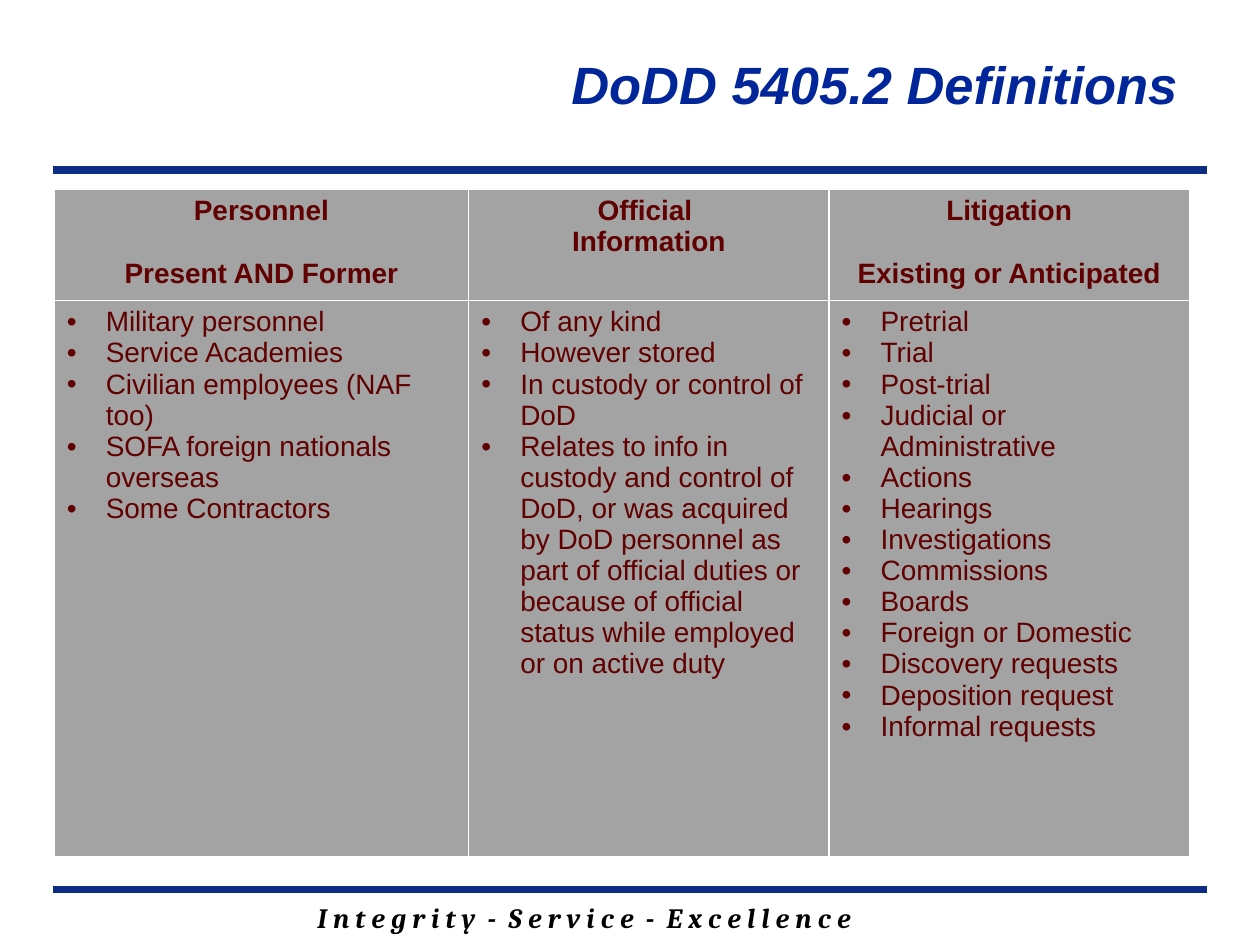
"""Build the DoDD 5405.2 definitions slide: a title, two rules, a table and a motto."""
from lxml.etree import SubElement
from pptx import Presentation
from pptx.dml.color import RGBColor
from pptx.enum.shapes import MSO_CONNECTOR as Link
from pptx.enum.text import MSO_ANCHOR as Anchor, MSO_AUTO_SIZE as Fit, PP_ALIGN as Align
from pptx.oxml.ns import qn
from pptx.util import Inches, Pt

NAVY = RGBColor(0x0C, 0x2D, 0x83)
BLUE = RGBColor(0x00, 0x26, 0x99)
MAROON = RGBColor(0x60, 0x00, 0x00)
GRAY = RGBColor(0xA3, 0xA3, 0xA3)
BLACK = RGBColor(0x00, 0x00, 0x00)

COLUMNS = [
    (3.29, 18, ["Personnel", "Present AND Former"],
     ["Military personnel", "Service Academies", "Civilian employees (NAF too)",
      "SOFA foreign nationals overseas", "Some Contractors"]),
    (2.86, 0, ["Official ", "Information"],
     ["Of any kind", "However stored", "In custody or control of DoD",
      "Relates to info in custody and control of DoD, or was acquired by DoD "
      "personnel as part of official duties or because of official status "
      "while employed or on active duty"]),
    (2.86, 18, ["Litigation", "Existing or Anticipated"],
     ["Pretrial", "Trial", "Post-trial", "Judicial or Administrative", "Actions",
      "Hearings", "Investigations", "Commissions", "Boards", "Foreign or Domestic",
      "Discovery requests", "Deposition request", "Informal requests"]),
]
ROWS = [0.83, 4.42]


def write(para, text, size, color, bold=False, slant=False, face="Arial"):
    run = para.add_run()
    run.text = text
    font = run.font
    font.name, font.size, font.bold, font.italic = face, Pt(size), bold, slant
    font.color.rgb = color


def paint(cell):
    props = cell._tc.get_or_add_tcPr()
    for side in ("lnL", "lnR", "lnT", "lnB"):
        edge = SubElement(props, qn(f"a:{side}"), w=str(Pt(1)))
        SubElement(SubElement(edge, qn("a:solidFill")), qn("a:srgbClr"), val="FFFFFF")
    cell.fill.solid()
    cell.fill.fore_color.rgb = GRAY


deck = Presentation()
deck.slide_width, deck.slide_height = Inches(10), Inches(7.5)
slide = deck.slides.add_slide(deck.slide_layouts[5])
shapes = slide.shapes

for y in (1.35, 7.06):
    rule = shapes.add_connector(Link.STRAIGHT, Inches(0.42), Inches(y), Inches(9.58), Inches(y))
    rule.line.color.rgb = NAVY
    rule.line.width = Pt(4.5)
    SubElement(rule._element.spPr, qn("a:effectLst"))

motto = shapes.add_textbox(Inches(2.42), Inches(7.1), Inches(7.17), Inches(0.37)).text_frame
motto.word_wrap = True
write(motto.paragraphs[0], "I n t e g r i t y  -  S e r v i c e  -  E x c e l l e n c e",
      16, BLACK, True, True, "Cambria")

title = shapes.title
title.left, title.top = Inches(1.67), Inches(0.35)
title.width, title.height = Inches(7.77), Inches(0.59)
frame = title.text_frame
frame.auto_size, frame.vertical_anchor = Fit.NONE, Anchor.BOTTOM
frame.margin_left = frame.margin_right = Inches(0.09)
frame.margin_top = frame.margin_bottom = Inches(0.04)
para = frame.paragraphs[0]
para.alignment, para.line_spacing = Align.RIGHT, 0.7
write(para, "DoDD 5405.2 Definitions", 30, BLUE, True, True)

grid = shapes.add_table(len(ROWS), len(COLUMNS), Inches(0.43), Inches(1.5),
                        Inches(9), Inches(sum(ROWS))).table
for row, tall in zip(grid.rows, ROWS):
    row.height = Inches(tall)

for col, (wide, gap, heads, items) in enumerate(COLUMNS):
    grid.columns[col].width = Inches(wide)
    for row, lines in enumerate((heads, items)):
        cell = grid.cell(row, col)
        paint(cell)
        for i, line in enumerate(lines):
            para = cell.text_frame.paragraphs[0] if i == 0 else cell.text_frame.add_paragraph()
            if row == 0:
                para.alignment = Align.CENTER
                if i and gap:
                    para.space_before = Pt(gap)
            else:
                props = para._p.get_or_add_pPr()
                props.set("marL", str(Inches(0.31)))
                props.set("indent", str(-Inches(0.31)))
                SubElement(props, qn("a:buFont"), typeface="Arial")
                SubElement(props, qn("a:buChar"), char="•")
            write(para, line, 16, MAROON, row == 0)

deck.save("out.pptx")
